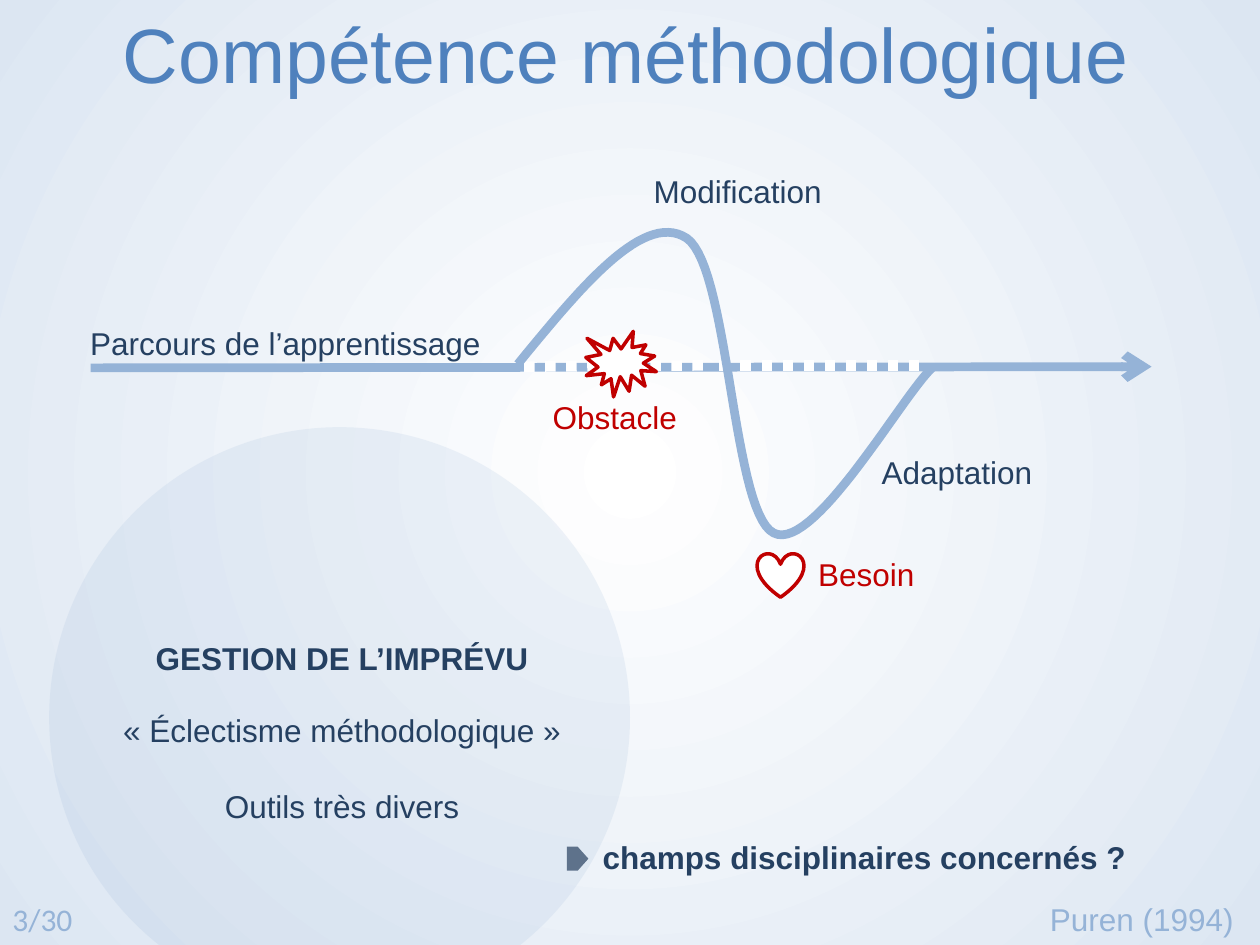
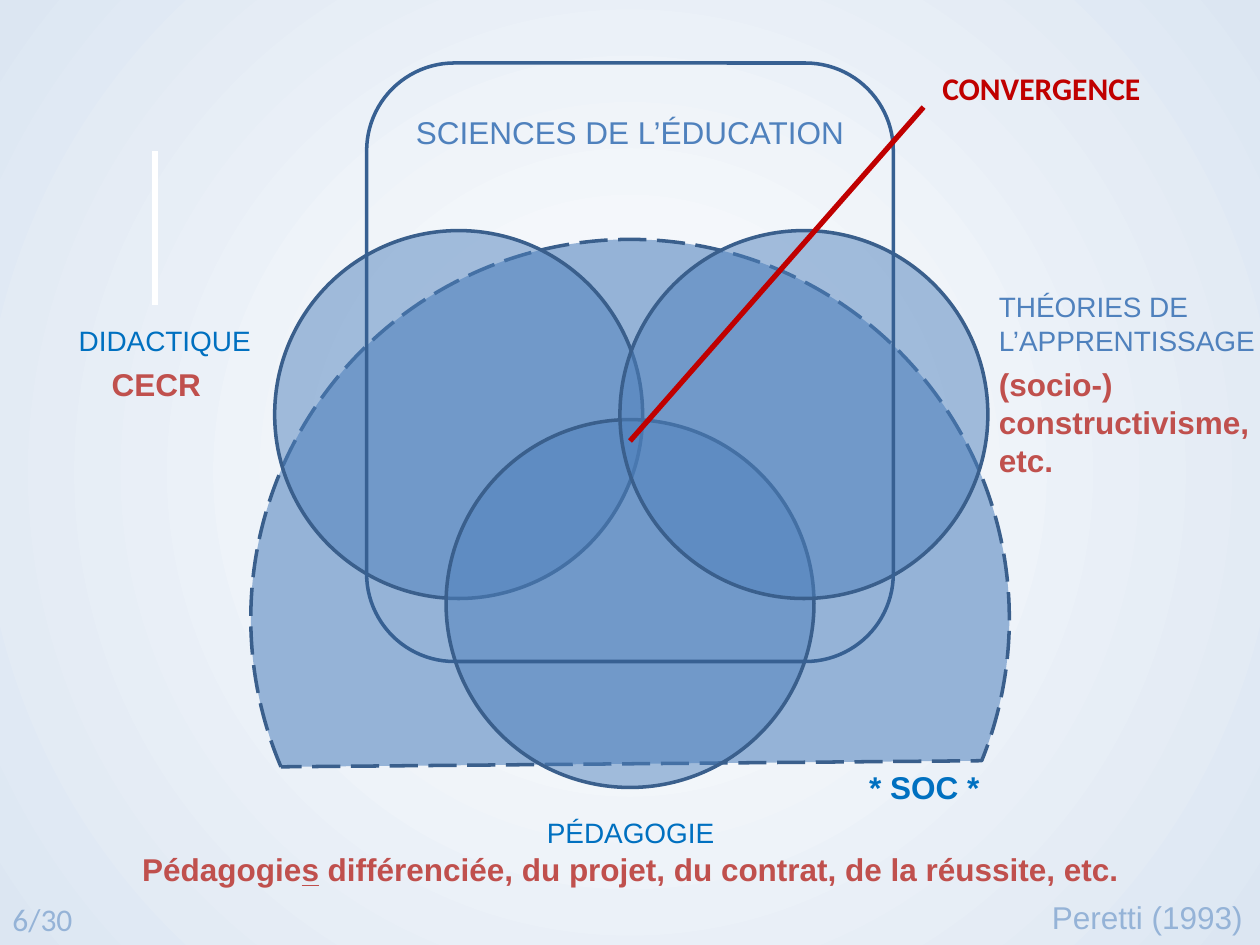
import lxml.etree
import pptx
import pptx.dml.color
import pptx.enum.dml
import pptx.enum.shapes
import pptx.enum.text
import pptx.oxml.ns
import pptx.util

RGBColor = pptx.dml.color.RGBColor
WHITE = RGBColor(0xFF, 0xFF, 0xFF)
PALE_BLUE = RGBColor(0xDC, 0xE6, 0xF2)
LIGHT_BLUE = RGBColor(0x95, 0xB3, 0xD7)
MID_BLUE = RGBColor(0x4F, 0x81, 0xBD)
BRIGHT_BLUE = RGBColor(0x00, 0x70, 0xC0)
OUTLINE_BLUE = RGBColor(0x3A, 0x5F, 0x8C)
FRAME_BLUE = RGBColor(0x37, 0x60, 0x92)
NAVY = RGBColor(0x25, 0x40, 0x61)
SLATE = RGBColor(0x5E, 0x72, 0x8B)
RED = RGBColor(0xC0, 0x00, 0x00)
BRICK = RGBColor(0xC0, 0x50, 0x4D)

SLIDE_WIDTH = pptx.util.Inches(10)
SLIDE_HEIGHT = pptx.util.Inches(7.5)
COLUMNS = 100  # square cells, so the slide has 75 rows
CELL = SLIDE_WIDTH / COLUMNS

ALIGN = pptx.enum.text.PP_ALIGN
SHAPES = pptx.enum.shapes.MSO_SHAPE
DASHES = pptx.enum.dml.MSO_LINE

BODY = {"name": "Arial", "size": pptx.util.Pt(18)}
BOLD = {**BODY, "bold": True}
FIELD = {**BODY, "size": pptx.util.Pt(16)}
TITLE = {**BODY, "size": pptx.util.Pt(44)}
PAGE = {**BODY, "name": "Calibri"}
CALLOUT = {**PAGE, "bold": True}


def grid(*cells):
    return [round(cell * CELL) for cell in cells]


def add_xml(parent, tag, **attributes):
    return lxml.etree.SubElement(parent, pptx.oxml.ns.qn(tag), attributes)


def add_slide(presentation):
    """Add a blank slide with the shared radial background."""
    slide = presentation.slides.add_slide(presentation.slide_layouts[6])
    fill = slide.background.fill
    fill.gradient()
    for stop, color in zip(fill.gradient_stops, (WHITE, PALE_BLUE)):
        stop.color.rgb = color
    gradient = slide.background._cSld.find(".//" + pptx.oxml.ns.qn("a:gradFill"))
    gradient.remove(gradient.find(pptx.oxml.ns.qn("a:lin")))
    radial = add_xml(gradient, "a:path", path="circle")
    add_xml(radial, "a:fillToRect", l="50000", t="50000", r="50000", b="50000")
    return slide


def add_text(slide, box, paragraphs, color, style=BODY, align=ALIGN.CENTER,
             wrap=False, gap=0):
    """Add paragraphs, each a string or a list of (text, extra format) runs."""
    frame = slide.shapes.add_textbox(*grid(*box)).text_frame
    frame.word_wrap = wrap
    for index, runs in enumerate(paragraphs):
        paragraph = frame.add_paragraph() if index else frame.paragraphs[0]
        paragraph.alignment = align
        if index:
            paragraph.space_before = pptx.util.Pt(gap)
        for text, extra in [(runs, {})] if isinstance(runs, str) else runs:
            run = paragraph.add_run()
            run.text = text
            run.font.color.rgb = color
            for name, value in {**style, **extra}.items():
                setattr(run.font, name, value)


def style_line(line, color, width, dash=None):
    line.color.rgb = color
    for name, value in {"width": pptx.util.Pt(width), "dash_style": dash}.items():
        setattr(line, name, value)


def add_figure(slide, kind, box, fill=None, opacity=100, line=None, rotation=0):
    shape = slide.shapes.add_shape(kind, *grid(*box))
    shape.shadow.inherit = False
    shape.rotation = rotation
    if fill is None:
        shape.fill.background()
    else:
        shape.fill.solid()
        shape.fill.fore_color.rgb = fill
    if opacity < 100:
        color = shape.fill._xPr.find(".//" + pptx.oxml.ns.qn("a:srgbClr"))
        add_xml(color, "a:alpha", val=str(opacity * 1000))
    if line:
        style_line(shape.line, *line)
    else:
        shape.line.fill.background()


def add_line(slide, start, end, line, arrow=False):
    connector = slide.shapes.add_connector(
        pptx.enum.shapes.MSO_CONNECTOR.STRAIGHT, *grid(*start, *end))
    style_line(connector.line, *line)
    if arrow:
        add_xml(connector.line._get_or_add_ln(), "a:tailEnd", type="arrow")
    add_xml(connector._element.spPr, "a:effectLst")


def bezier(points, steps=30):
    """Sample a cubic curve, leaving out its first point."""
    weights = (1, 3, 3, 1)
    for step in range(1, steps + 1):
        t = step / steps
        yield tuple(
            sum(weight * (1 - t) ** (3 - power) * t ** power * point[axis]
                for power, (weight, point) in enumerate(zip(weights, points)))
            for axis in (0, 1))


def add_curve(slide, points, line):
    """Draw joined cubic curves; every third point lies on the line."""
    builder = slide.shapes.build_freeform(*grid(*points[0]))
    for first in range(0, len(points) - 1, 3):
        builder.add_line_segments(
            [grid(*point) for point in bezier(points[first:first + 4])], close=False)
    curve = builder.convert_to_shape()
    curve.shadow.inherit = False
    curve.fill.background()
    style_line(curve.line, *line)


def add_footer(slide, page, reference, box, align):
    add_text(slide, (0, 70.9, 6.9, 4), [page], LIGHT_BLUE, PAGE, ALIGN.LEFT)
    add_text(slide, box, [reference], LIGHT_BLUE, align=align)


def build_learning_path(presentation):
    slide = add_slide(presentation)
    path_line = (LIGHT_BLUE, 5)
    gap_line = (WHITE, 6, DASHES.ROUND_DOT)
    symbol_line = (RED, 2)

    add_figure(slide, SHAPES.OVAL, (3.9, 33.9, 46.1, 46.1), LIGHT_BLUE, opacity=15)
    add_text(slide, (8.6, 55.9, 37.1, 10.1),
             ["«\u00a0Éclectisme méthodologique\u00a0»".replace("\u00a0", " "),
              "Outils très divers"], NAVY, gap=22)
    add_text(slide, (11.2, 50.2, 31.9, 4), ["GESTION DE L’IMPRÉVU"], NAVY, BOLD)
    add_text(slide, (46.6, 66, 44, 4), ["champs disciplinaires concernés ?"], NAVY, BOLD)
    add_figure(slide, SHAPES.PENTAGON, (45, 67.2, 1.7, 1.9), SLATE)

    add_line(slide, (7.2, 29.2), (91.4, 29.1), path_line, arrow=True)
    add_line(slide, (57.1, 29), (73.7, 29), gap_line)
    add_line(slide, (41.6, 29.1), (56.1, 29), gap_line)
    add_curve(slide, [(41.1, 28.9), (46.1, 22.8), (51.1, 16.7), (54.5, 18.9),
                      (57.9, 21.2), (58.1, 40.6), (61.4, 42.3),
                      (64.6, 44), (71.9, 30.9), (74.1, 29.1)], path_line)
    add_figure(slide, SHAPES.EXPLOSION1, (46.5, 26.3, 5.6, 5.2), WHITE, line=symbol_line)
    add_figure(slide, SHAPES.HEART, (60.1, 43.9, 3.7, 3.5), WHITE, line=symbol_line)

    for text, left, top, width, color in (
            ("Parcours de l’apprentissage", 6, 25.2, 33.3, NAVY),
            ("Modification", 50.8, 13.2, 15.5, NAVY),
            ("Adaptation", 68.9, 35.5, 14.1, NAVY),
            ("Obstacle", 42.8, 31.1, 12, RED),
            ("Besoin", 63.9, 43.6, 9.7, RED)):
        add_text(slide, (left, top, width, 4), [text], color)

    add_text(slide, (4.7, 0, 90, 15.3), ["Compétence méthodologique"],
             MID_BLUE, TITLE, wrap=True)
    add_footer(slide, "3/30", "Puren (1994)", (82.2, 70.9, 16.7, 4), ALIGN.RIGHT)


def build_convergence(presentation):
    slide = add_slide(presentation)
    diameter = 29.2
    add_figure(slide, SHAPES.CHORD, (19.9, 19, 60.2, 60.2), LIGHT_BLUE,
               line=(OUTLINE_BLUE, 2, DASHES.LONG_DASH), rotation=112)
    for left, top in ((21.8, 18.3), (35.4, 33.3), (49.2, 18.3)):
        add_figure(slide, SHAPES.OVAL, (left, top, diameter, diameter), MID_BLUE,
                   opacity=50, line=(OUTLINE_BLUE, 2))
    add_figure(slide, SHAPES.ROUNDED_RECTANGLE, (29.1, 5, 41.8, 47.5),
               line=(FRAME_BLUE, 2))

    add_text(slide, (31.6, 8.5, 36.8, 4), ["SCIENCES DE L’ÉDUCATION"], MID_BLUE)
    add_text(slide, (67.9, 60.5, 10.9, 4), ["* SOC *"], BRIGHT_BLUE, BOLD)
    for text, box, color, align in (
            ("DIDACTIQUE", (3.5, 25.2, 17.4, 3.7), BRIGHT_BLUE, ALIGN.RIGHT),
            ("THÉORIES DE L’APPRENTISSAGE", (78.3, 22.5, 23.3, 6.4), MID_BLUE, ALIGN.LEFT),
            ("PÉDAGOGIE", (41.5, 64.2, 17.1, 3.7), BRIGHT_BLUE, ALIGN.CENTER)):
        add_text(slide, box, [text], color, FIELD, align, wrap=True)

    add_text(slide, (7.8, 28.5, 9.2, 4), ["CECR"], BRICK, BOLD)
    add_text(slide, (9.9, 67, 80.3, 4),
             [[("Pédagogie", {}), ("s", {"underline": True}),
               (" différenciée, du projet, du contrat, de la réussite, etc.", {})]],
             BRICK, BOLD)
    add_text(slide, (78.3, 28.5, 22.5, 10.1), ["(socio-) constructivisme, etc."],
             BRICK, BOLD, ALIGN.LEFT, wrap=True)

    add_line(slide, (50, 35), (73.3, 8.5), (RED, 3))
    add_text(slide, (73.8, 5, 17.9, 4), ["CONVERGENCE"], RED, CALLOUT, ALIGN.LEFT)
    add_line(slide, (12.3, 12), (12.3, 24.2), (WHITE, 3))
    add_footer(slide, "6/30", "Peretti (1993)", (82.5, 70.8, 17.3, 4), ALIGN.LEFT)


def main():
    presentation = pptx.Presentation()
    presentation.slide_width = SLIDE_WIDTH
    presentation.slide_height = SLIDE_HEIGHT
    build_learning_path(presentation)
    build_convergence(presentation)
    presentation.save("out.pptx")


if __name__ == "__main__":
    main()
